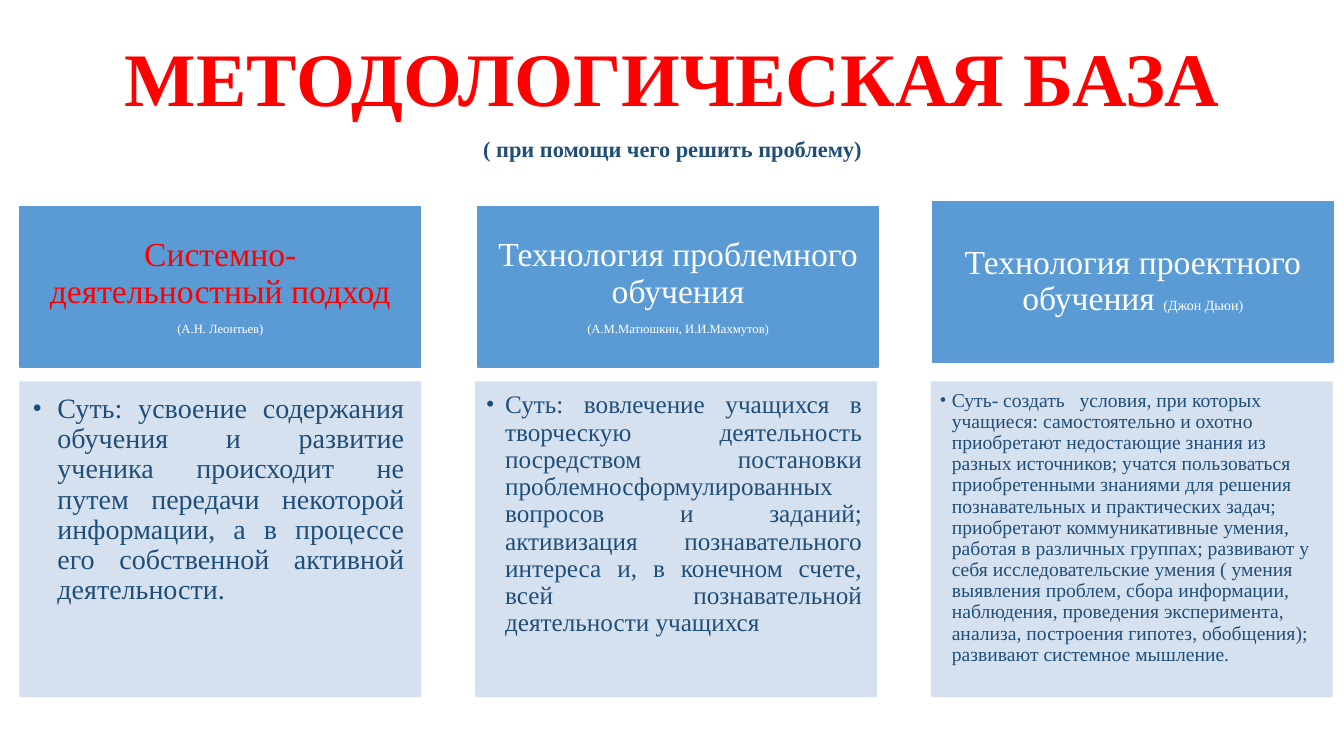
"""Builds a slide with three teaching methods, each a header over its essence."""
from lxml.etree import SubElement
from pptx import Presentation
from pptx.dml.color import RGBColor
from pptx.enum.shapes import MSO_SHAPE
from pptx.enum.text import MSO_ANCHOR, MSO_AUTO_SIZE, PP_ALIGN
from pptx.oxml.ns import qn
from pptx.util import Inches, Pt

RED = RGBColor(0xFF, 0x00, 0x00)
NAVY = RGBColor(0x1F, 0x4E, 0x79)
WHITE = RGBColor(0xFF, 0xFF, 0xFF)
BLUE = RGBColor(0x5B, 0x9B, 0xD5)
PALE = RGBColor(0xD2, 0xDE, 0xEF)
FONT = "Times New Roman"
RECT = MSO_SHAPE.RECTANGLE
MIDDLE, TOP = MSO_ANCHOR.MIDDLE, MSO_ANCHOR.TOP
CENTER, LEFT, JUST = PP_ALIGN.CENTER, PP_ALIGN.LEFT, PP_ALIGN.JUSTIFY
FIXED = MSO_AUTO_SIZE.NONE

TITLE = [
    [("МЕТОДОЛОГИЧЕСКАЯ БАЗА", 54, RED, True)],
    [("( при помощи чего решить проблему)", 16, NAVY, True)],
]
HEADS = [
    (0.2, 2.05, [[("Системно-деятельностный подход", 24, RED, False)],
                 [("(А.Н. Леонтьев)", 9, WHITE, False)]]),
    (4.74, 2.05, [[("Технология проблемного обучения", 24, WHITE, False)],
                  [("(А.М.Матюшкин, И.И.Махмутов)", 9, WHITE, False)]]),
    (9.25, 2.0, [[("Технология проектного обучения ", 24, WHITE, False),
                  ("(Джон Дьюи)", 10, WHITE, False)]]),
]
BODIES = [
    (1, 20, JUST, 0.25, (0.12, 0.12, 0.16, 0.17),
     "Суть: усвоение содержания обучения и развитие ученика происходит не "
     "путем передачи некоторой информации, а в процессе его собственной "
     "активной деятельности."),
    (2, 18, JUST, 0.19, (0.1, 0.1, 0.14, 0.16),
     "Суть: вовлечение учащихся в творческую деятельность посредством "
     "постановки проблемносформулированных вопросов и заданий; активизация  "
     "познавательного интереса и, в конечном счете, всей познавательной "
     "деятельности учащихся"),
    (4, 14, LEFT, 0.12, (0.08, 0.08, 0.11, 0.12),
     "Суть- создать   условия, при которых учащиеся: самостоятельно и охотно "
     "приобретают недостающие знания из разных источников; учатся "
     "пользоваться приобретенными знаниями для решения познавательных и "
     "практических задач; приобретают коммуникативные умения, работая в "
     "различных группах; развивают у себя исследовательские умения ( умения "
     "выявления проблем, сбора информации, наблюдения, проведения "
     "эксперимента, анализа, построения гипотез, обобщения); развивают "
     "системное мышление."),
]
WIDE, HEAD_H, BODY_H = 3.97, 1.59, 3.12
BODY_X, BODY_STEP, BODY_Y = 0.2, 4.52, 3.79


def style(thing, form):
    """Set each attribute named in a dict."""
    for name, value in form.items():
        setattr(thing, name, value)


def place(shape, *box):
    """Move and size a shape in inches."""
    names = ("left", "top", "width", "height")
    style(shape, dict(zip(names, map(Inches, box))))


def paint(shape, color):
    """Give a shape one colour for fill and line."""
    shape.fill.solid()
    shape.fill.fore_color.rgb = color
    shape.line.color.rgb = color
    shape.line.width = Pt(1)


def write(shape, paras, anchor, pads, form):
    """Fill a shape with paragraphs of runs."""
    frame = shape.text_frame
    sides = ("margin_left", "margin_top", "margin_right", "margin_bottom")
    style(frame, dict(zip(sides, map(Inches, pads))))
    style(frame, {"word_wrap": True, "auto_size": FIXED,
                  "vertical_anchor": anchor})
    for i, runs in enumerate(paras):
        para = frame.add_paragraph() if i else frame.paragraphs[0]
        style(para, {"space_before": Pt(0), **form})
        for text, size, color, bold in runs:
            run = para.add_run()
            run.text = text
            style(run.font, {"name": FONT, "size": Pt(size), "bold": bold})
            run.font.color.rgb = color


def fade(shape):
    """Make fill and line slightly see-through."""
    for color in shape.fill._xPr.iter(qn("a:srgbClr")):
        SubElement(color, qn("a:alpha"), val="90000")


def bullet(shape, dent):
    """Hang a round bullet before the text."""
    props = shape.text_frame.paragraphs[0]._p.get_or_add_pPr()
    props.set("marL", str(Inches(dent)))
    props.set("indent", str(-Inches(dent)))
    SubElement(props, qn("a:buFont"), typeface=FONT)
    SubElement(props, qn("a:buChar"), char="•")


def main():
    """Lay out the slide and save it."""
    deck = Presentation()
    deck.slide_width, deck.slide_height = Inches(13.33), Inches(7.5)
    slide = deck.slides.add_slide(deck.slide_layouts[4])
    slots = {s.placeholder_format.idx: s for s in slide.placeholders}

    place(slots[0], 0.92, 0.19, 11.5, 1.47)
    write(slots[0], TITLE, MIDDLE, (0.1, 0.05, 0.1, 0.05),
          {"alignment": CENTER, "line_spacing": 1.07, "space_after": Pt(8)})

    for x, y, paras in HEADS:
        head = slide.shapes.add_shape(RECT, *map(Inches, (x, y, WIDE, HEAD_H)))
        head.shadow.inherit = False
        paint(head, BLUE)
        write(head, paras, MIDDLE, (0.19, 0.11, 0.19, 0.11),
              {"alignment": CENTER, "line_spacing": 0.9,
               "space_after": Pt(8.4)})

    for col, (idx, size, align, dent, pads, text) in enumerate(BODIES):
        body = slots[idx]
        place(body, BODY_X + col * BODY_STEP, BODY_Y, WIDE, BODY_H)
        paint(body, PALE)
        fade(body)
        write(body, [[(text, size, NAVY, False)]], TOP, pads,
              {"alignment": align, "line_spacing": 0.9,
               "space_after": Pt(size * 0.15)})
        bullet(body, dent)

    spare = slots[3].element
    spare.getparent().remove(spare)
    deck.save("out.pptx")


if __name__ == "__main__":
    main()
